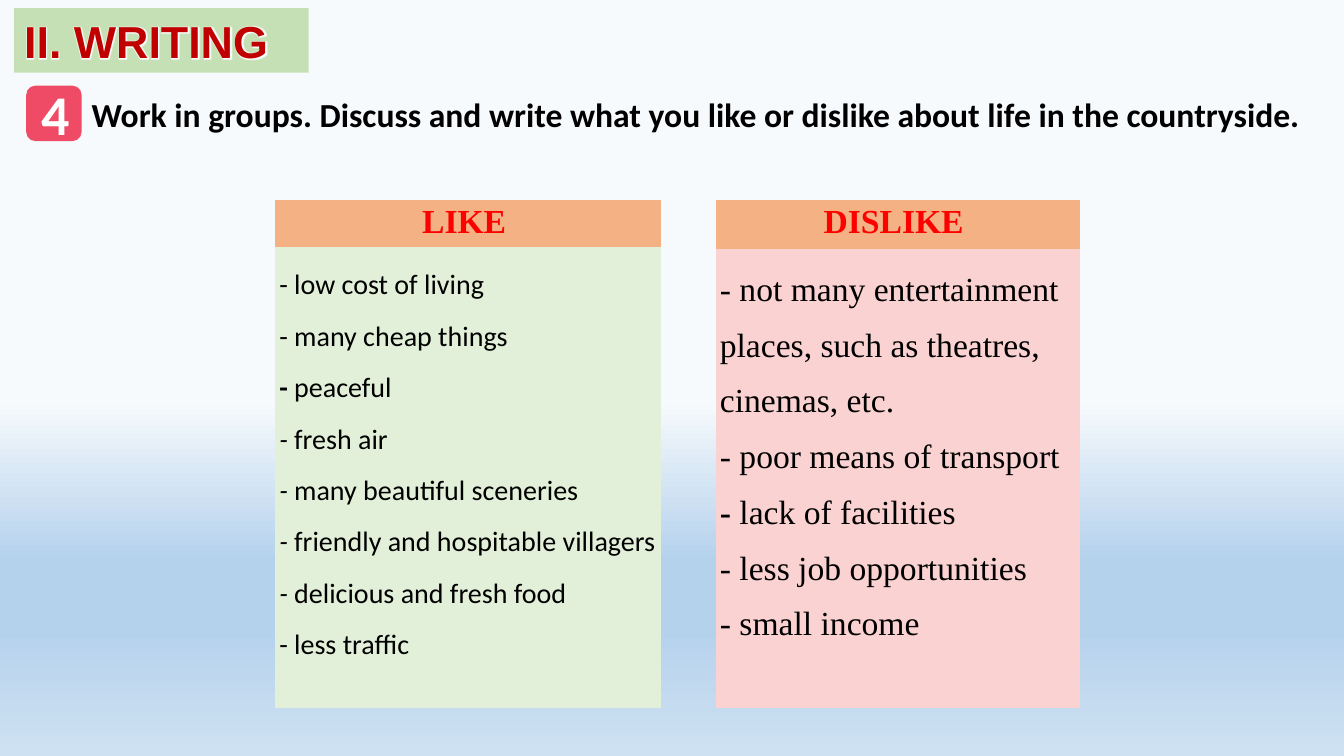
from lxml import etree
from pptx import Presentation
from pptx.dml.color import RGBColor
from pptx.enum import shapes, text
from pptx.oxml import ns, parse_xml
from pptx.util import Inches, Pt

TITLE = "II. WRITING"
TASK_NUMBER = "4"
TASK = "Work in groups. Discuss and write what you like or dislike about life in the countryside."

BLACK = RGBColor(0x00, 0x00, 0x00)
WHITE = RGBColor(0xFF, 0xFF, 0xFF)
RED = RGBColor(0xFF, 0x00, 0x00)
DARK_RED = RGBColor(0xC0, 0x00, 0x00)
PINK = RGBColor(0xEF, 0x4B, 0x66)
ORANGE = RGBColor(0xF4, 0xB1, 0x83)
TITLE_GREEN = RGBColor(0xC5, 0xE0, 0xB4)
LIST_GREEN = RGBColor(0xE2, 0xF0, 0xD9)
LIST_PINK = RGBColor(0xFB, 0xD2, 0xD2)
SKY = [(53, "F7FAFD"), (74, "B5D2EC"), (83, "B5D2EC"), (100, "CEE1F2")]

# Each item: style of its dash ("", "b" or "i"), wording
LISTS = [
    dict(heading="LIKE ", left=2.73, width=3.83, rows=(0.47, 4.57),
         font="Calibri", size=20, fill=LIST_GREEN, items=[
             ("", "low cost of living"),
             ("", "many cheap things"),
             ("b", "peaceful"),
             ("i", "fresh air"),
             ("i", "many beautiful sceneries"),
             ("i", "friendly and hospitable villagers"),
             ("i", "delicious and fresh food"),
             ("", "less traffic")]),
    dict(heading="DISLIKE ", left=7.1, width=3.61, rows=(0.49, 4.55),
         font="Times New Roman", size=24, fill=LIST_PINK, items=[
             ("", "not many entertainment places, such as theatres, cinemas, etc."),
             ("i", "poor means of transport"),
             ("b", "lack of facilities"),
             ("i", "less job opportunities"),
             ("i", "small income")]),
]
LIST_TOP = 1.98
NO_STYLE = "{2D5ABB26-0587-4C30-8999-92F81FD0307C}"


def box(left, top, width, height):
    return [Inches(v) for v in (left, top, width, height)]


def set_font(font, name, size, color, bold=True):
    font.name, font.size, font.bold = name, Pt(size), bold
    font.color.rgb = color


def paint(sp, color):
    sp.fill.solid()
    sp.fill.fore_color.rgb = color


def paint_sky(slide):
    fill = slide.background.fill
    fill.gradient()
    grad = slide.background._cSld.find(".//" + ns.qn("a:gradFill"))
    for child in list(grad):
        grad.remove(child)
    stops = etree.SubElement(grad, ns.qn("a:gsLst"))
    for position, color in SKY:
        stop = etree.SubElement(stops, ns.qn("a:gs"), pos=str(position * 1000))
        etree.SubElement(stop, ns.qn("a:srgbClr"), val=color)
    etree.SubElement(grad, ns.qn("a:lin"), ang="5400000", scaled="0")


def add_label(slide, wording, place, size, align):
    tf = slide.shapes.add_textbox(*box(*place)).text_frame
    tf.word_wrap = True
    p = tf.paragraphs[0]
    p.text, p.alignment = wording, align
    set_font(p.font, "Calibri", size, BLACK if wording == TASK else WHITE)


def add_list(slide, heading, left, width, rows, font, size, fill, items):
    place = box(left, LIST_TOP, width, sum(rows))
    table = slide.shapes.add_table(len(rows), 1, *place).table
    table.first_row = table.horz_banding = False
    table._tbl.tblPr.find(ns.qn("a:tableStyleId")).text = NO_STYLE
    for i, (height, color) in enumerate(zip(rows, (ORANGE, fill))):
        table.rows[i].height = Inches(height)
        cell = table.cell(i, 0)
        paint(cell, color)
        cell.margin_left = cell.margin_right = Inches(0.04)
        cell.margin_top = cell.margin_bottom = Inches(0.04)

    p = table.cell(0, 0).text_frame.paragraphs[0]
    p.text, p.alignment = heading, text.PP_ALIGN.CENTER
    set_font(p.font, "Times New Roman", 24, RED)

    tf = table.cell(1, 0).text_frame
    for i, (style, wording) in enumerate(items):
        p = tf.add_paragraph() if i else tf.paragraphs[0]
        p.line_spacing = 1.5
        set_font(p.font, font, size, BLACK, False)
        dash, r = p.add_run(), p.add_run()
        dash.text, r.text = "- ", wording
        if style:
            dash.font.bold, dash.font.italic = style == "b", style == "i"


def add_title(slide):
    sp = slide.shapes.title
    sp.left, sp.top, sp.width, sp.height = box(0.14, 0.08, 2.92, 0.64)
    paint(sp, TITLE_GREEN)
    tf = sp.text_frame
    tf.vertical_anchor = text.MSO_ANCHOR.MIDDLE
    p = tf.paragraphs[0]
    p.alignment = text.PP_ALIGN.LEFT
    r = p.add_run()
    r.text = TITLE
    set_font(r.font, "Arial", 32, DARK_RED)
    glow = parse_xml(f'<a:effectLst {ns.nsdecls("a")}><a:glow rad="38100">'
                     '<a:srgbClr val="FFFFFF"/></a:glow></a:effectLst>')
    r._r.rPr.find(ns.qn("a:solidFill")).addnext(glow)


def main():
    prs = Presentation()
    prs.slide_width, prs.slide_height = Inches(13.33), Inches(7.5)
    slide = prs.slides.add_slide(prs.slide_layouts[5])
    paint_sky(slide)
    add_title(slide)
    for columns in LISTS:
        add_list(slide, **columns)

    badge = slide.shapes.add_shape(shapes.MSO_SHAPE.ROUNDED_RECTANGLE,
                                   *box(0.26, 0.85, 0.55, 0.55))
    badge.shadow.inherit = False
    paint(badge, PINK)
    badge.line.fill.background()
    add_label(slide, TASK, (0.81, 0.88, 12.32, 0.5), 24, text.PP_ALIGN.LEFT)
    add_label(slide, TASK_NUMBER, (0.31, 0.74, 0.43, 0.77), 40, text.PP_ALIGN.CENTER)
    prs.save("out.pptx")


if __name__ == "__main__":
    main()
